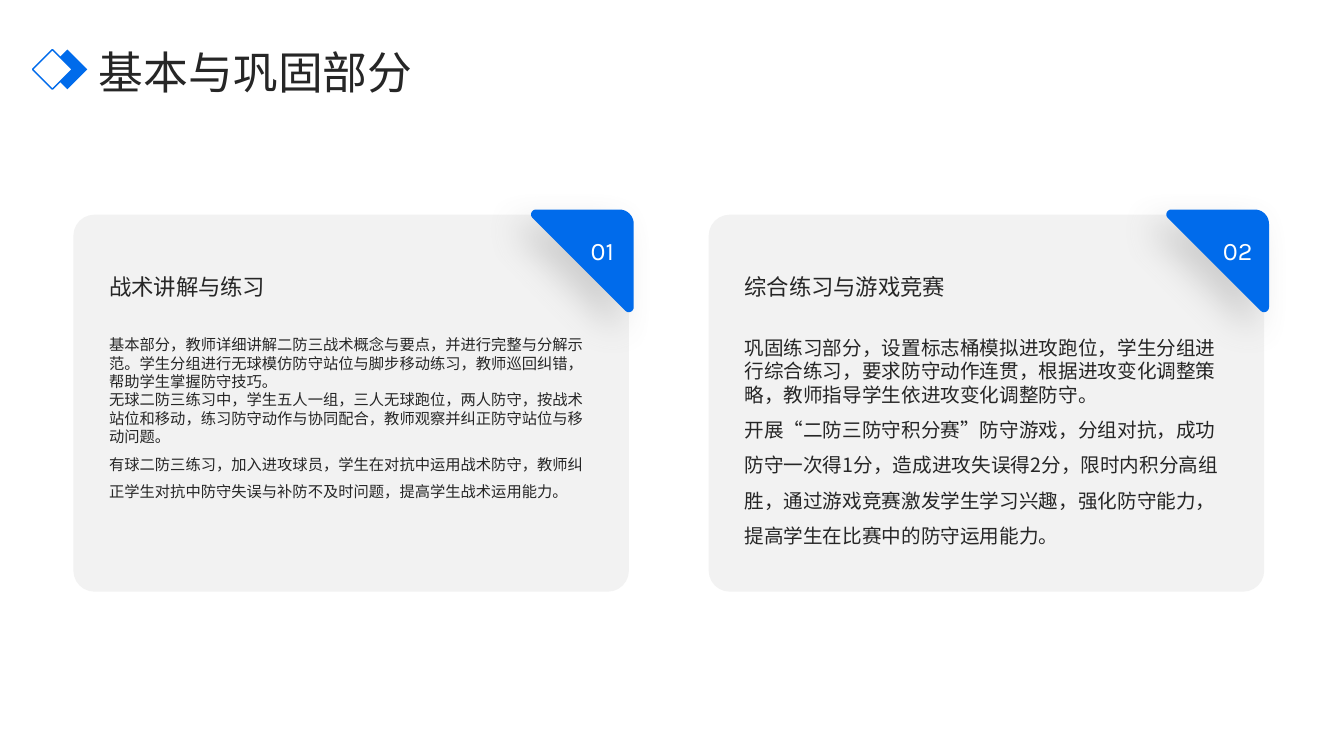
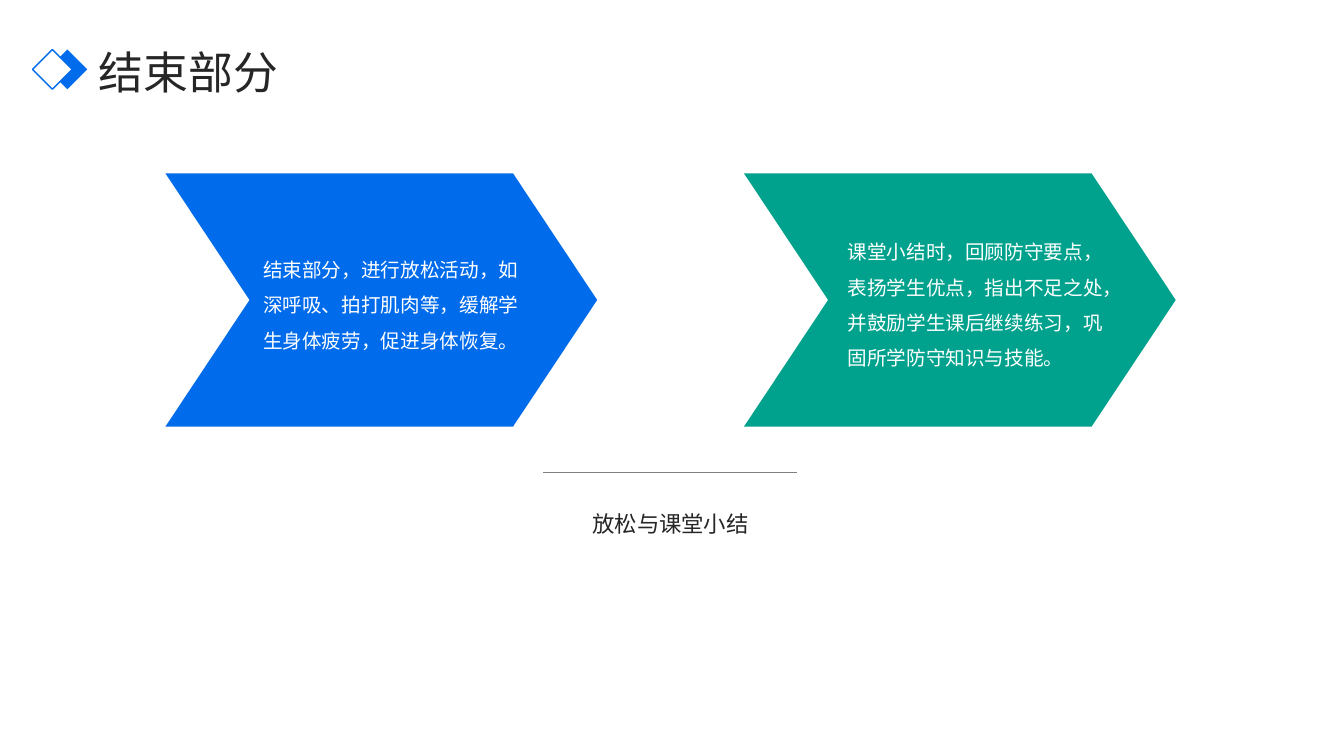
from dataclasses import dataclass
from typing import Optional

from lxml.etree import SubElement
from pptx import Presentation
from pptx.dml.color import RGBColor
from pptx.enum.shapes import MSO_CONNECTOR, MSO_SHAPE
from pptx.enum.text import MSO_ANCHOR, PP_ALIGN
from pptx.oxml.ns import qn
from pptx.shapes.autoshape import Shape
from pptx.slide import Slide
from pptx.util import Cm, Pt

COLORS = {
    "blue": "006BEB",
    "green": "00A28D",
    "panel": "F2F2F2",
    "ink": "262626",
    "white": "FFFFFF",
    "gray": "808080",
}
CJK_FONT = "Noto Sans CJK SC"
NUMBER_FONT = "Karla"

Point = tuple[float, float]


@dataclass(frozen=True)
class Box:
    """A rectangle in centimetres."""
    left: float
    top: float
    width: float
    height: float

    def lengths(self) -> tuple[Cm, Cm, Cm, Cm]:
        return Cm(self.left), Cm(self.top), Cm(self.width), Cm(self.height)


@dataclass(frozen=True)
class TextStyle:
    size: float
    spacing: float
    color: str = "ink"
    font: str = CJK_FONT
    align: PP_ALIGN = PP_ALIGN.LEFT
    anchor: MSO_ANCHOR = MSO_ANCHOR.MIDDLE


@dataclass(frozen=True)
class Card:
    number: str
    heading: str
    body: tuple[str, ...]
    body_size: float


@dataclass(frozen=True)
class Stage:
    color: str
    text: str
    text_offset: float
    text_width: float


TITLE = TextStyle(32, 1.1)
HEADING = TextStyle(16, 1.2)
NUMBER = TextStyle(18, 1.1, "white", NUMBER_FONT, PP_ALIGN.CENTER)
STAGE_TEXT = TextStyle(14, 1.5, "white")
CAPTION = TextStyle(16, 1.5, align=PP_ALIGN.CENTER, anchor=MSO_ANCHOR.TOP)

CARD_LEFT, CARD_TOP, CARD_PITCH = 1.85, 5.41, 16.01
STAGE_LEFT, STAGE_TOP, STAGE_PITCH = 4.17, 4.37, 14.58
STAGE_WIDTH, STAGE_HEIGHT, STAGE_NOTCH = 10.88, 6.38, 2.12

CARDS = (
    Card("01", "战术讲解与练习", (
        "基本部分，教师详细讲解二防三战术概念与要点，并进行完整与分解示范。"
        "学生分组进行无球模仿防守站位与脚步移动练习，教师巡回纠错，帮助学生掌握防守技巧。",
        "无球二防三练习中，学生五人一组，三人无球跑位，两人防守，按战术站位和移动，"
        "练习防守动作与协同配合，教师观察并纠正防守站位与移动问题。",
        "有球二防三练习，加入进攻球员，学生在对抗中运用战术防守，"
        "教师纠正学生对抗中防守失误与补防不及时问题，提高学生战术运用能力。",
    ), 10.9),
    Card("02", "综合练习与游戏竞赛", (
        "巩固练习部分，设置标志桶模拟进攻跑位，学生分组进行综合练习，"
        "要求防守动作连贯，根据进攻变化调整策略，教师指导学生依进攻变化调整防守。",
        "开展“二防三防守积分赛”防守游戏，分组对抗，成功防守一次得1分，"
        "造成进攻失误得2分，限时内积分高组胜，通过游戏竞赛激发学生学习兴趣，"
        "强化防守能力，提高学生在比赛中的防守运用能力。",
    ), 14),
)
STAGES = (
    Stage("blue", "结束部分，进行放松活动，如深呼吸、拍打肌肉等，缓解学生身体疲劳，促进身体恢复。",
          2.46, 6.73),
    Stage("green", "课堂小结时，回顾防守要点，表扬学生优点，指出不足之处，"
                   "并鼓励学生课后继续练习，巩固所学防守知识与技能。", 2.61, 6.48),
)


def rgb(name: str) -> RGBColor:
    return RGBColor.from_string(COLORS[name])


def paint(shape: Shape, fill: str, line: Optional[str] = None) -> None:
    shape.shadow.inherit = False
    shape.fill.solid()
    shape.fill.fore_color.rgb = rgb(fill)
    if line:
        shape.line.color.rgb = rgb(line)
        shape.line.width = Pt(1)
    else:
        shape.line.fill.background()


def add_preset(slide: Slide, kind: MSO_SHAPE, box: Box, fill: str,
               line: Optional[str] = None, adjustment: Optional[float] = None) -> None:
    shape = slide.shapes.add_shape(kind, *box.lengths())
    if adjustment is not None:
        shape.adjustments[0] = adjustment
    paint(shape, fill, line)


def add_text(slide: Slide, box: Box, style: TextStyle, *paragraphs: str) -> None:
    """Add paragraphs; only the last takes the style's spacing, the others are single-spaced."""
    frame = slide.shapes.add_textbox(*box.lengths()).text_frame
    frame_format = {"word_wrap": True, "vertical_anchor": style.anchor,
                    "margin_left": 0, "margin_top": 0, "margin_right": 0, "margin_bottom": 0}
    for name, value in frame_format.items():
        setattr(frame, name, value)
    for index, text in enumerate(paragraphs):
        paragraph = frame.add_paragraph() if index else frame.paragraphs[0]
        is_last = index == len(paragraphs) - 1
        paragraph.alignment = style.align
        paragraph.line_spacing = style.spacing if is_last else 1.0
        run = paragraph.add_run()
        run.text = text
        for name, value in {"size": Pt(style.size), "name": style.font, "bold": False}.items():
            setattr(run.font, name, value)
        run.font.color.rgb = rgb(style.color)
        SubElement(run._r.get_or_add_rPr(), qn("a:ea"), typeface=style.font)


def bezier(start: Point, first: Point, second: Point, end: Point, steps: int = 10) -> list[Point]:
    """Sample a cubic curve, both ends included."""
    def at(t: float, axis: int) -> float:
        u = 1 - t
        return (u ** 3 * start[axis] + 3 * u * u * t * first[axis]
                + 3 * u * t * t * second[axis] + t ** 3 * end[axis])
    return [(at(i / steps, 0), at(i / steps, 1)) for i in range(steps + 1)]


def add_soft_shadow(shape: Shape) -> None:
    effects = shape._element.spPr.find(qn("a:effectLst"))
    shadow = SubElement(effects, qn("a:outerShdw"), blurRad=str(Pt(25)), dist=str(Pt(15)),
                        dir=str(135 * 60000), algn="tr", rotWithShape="0")
    color = SubElement(shadow, qn("a:srgbClr"), val=COLORS["gray"])
    SubElement(color, qn("a:alpha"), val="30000")


def add_corner_flag(slide: Slide, left: float, top: float) -> None:
    """Draw the triangle with rounded corners that holds a card's number."""
    outline = [
        *bezier((0.13, 0), (0.02, 0), (-0.04, 0.13), (0.04, 0.21)),
        *bezier((2.38, 2.55), (2.46, 2.63), (2.59, 2.57), (2.59, 2.46)),
        *bezier((2.59, 0.36), (2.59, 0.16), (2.43, 0), (2.23, 0)),
    ]
    points = [(Cm(left + x), Cm(top + y)) for x, y in outline]
    builder = slide.shapes.build_freeform(*points[0])
    builder.add_line_segments(points[1:], close=True)
    flag = builder.convert_to_shape()
    paint(flag, "blue")
    add_soft_shadow(flag)


def add_card(slide: Slide, left: float, card: Card) -> None:
    add_preset(slide, MSO_SHAPE.ROUNDED_RECTANGLE, Box(left, CARD_TOP, 14, 9.5),
               "panel", adjustment=0.056)
    add_corner_flag(slide, left + 11.53, CARD_TOP - 0.13)
    add_text(slide, Box(left + 12.53, 5.77, 1.6, 0.99), NUMBER, card.number)
    add_text(slide, Box(left + 0.9, 6.55, 11.63, 1.19), HEADING, card.heading)
    body = TextStyle(card.body_size, 1.5, anchor=MSO_ANCHOR.TOP)
    add_text(slide, Box(left + 0.9, 8.46, 12.19, 5.41), body, *card.body)


def add_stage(slide: Slide, left: float, stage: Stage) -> None:
    add_preset(slide, MSO_SHAPE.CHEVRON, Box(left, STAGE_TOP, STAGE_WIDTH, STAGE_HEIGHT),
               stage.color, adjustment=STAGE_NOTCH / STAGE_HEIGHT)
    add_text(slide, Box(left + stage.text_offset, 5.08, stage.text_width, 4.92),
             STAGE_TEXT, stage.text)


def add_rule(slide: Slide, left: float, right: float, top: float) -> None:
    rule = slide.shapes.add_connector(MSO_CONNECTOR.STRAIGHT, Cm(left), Cm(top), Cm(right), Cm(top))
    rule.line.color.rgb = rgb("gray")
    rule.line.width = Pt(0.5)
    SubElement(rule._element.spPr, qn("a:effectLst"))


def add_titled_slide(deck: Presentation, title: str) -> Slide:
    slide = deck.slides.add_slide(deck.slide_layouts[6])
    add_text(slide, Box(2.49, 1.09, 29.49, 1.3), TITLE, title)
    add_preset(slide, MSO_SHAPE.DIAMOND, Box(1.2, 1.25, 1, 1), "blue")
    add_preset(slide, MSO_SHAPE.DIAMOND, Box(0.82, 1.25, 1, 1), "white", "blue")
    return slide


def main() -> None:
    deck = Presentation()
    deck.slide_width, deck.slide_height = Cm(33.87), Cm(19.05)

    practice = add_titled_slide(deck, "基本与巩固部分")
    for index, card in enumerate(CARDS):
        add_card(practice, CARD_LEFT + index * CARD_PITCH, card)

    closing = add_titled_slide(deck, "结束部分")
    for index, stage in enumerate(STAGES):
        add_stage(closing, STAGE_LEFT + index * STAGE_PITCH, stage)
    add_rule(closing, 13.69, 20.09, 11.91)
    add_text(closing, Box(STAGE_LEFT, 12.52, STAGE_PITCH + STAGE_WIDTH, 3.71),
             CAPTION, "放松与课堂小结")

    deck.save("out.pptx")


if __name__ == "__main__":
    main()
